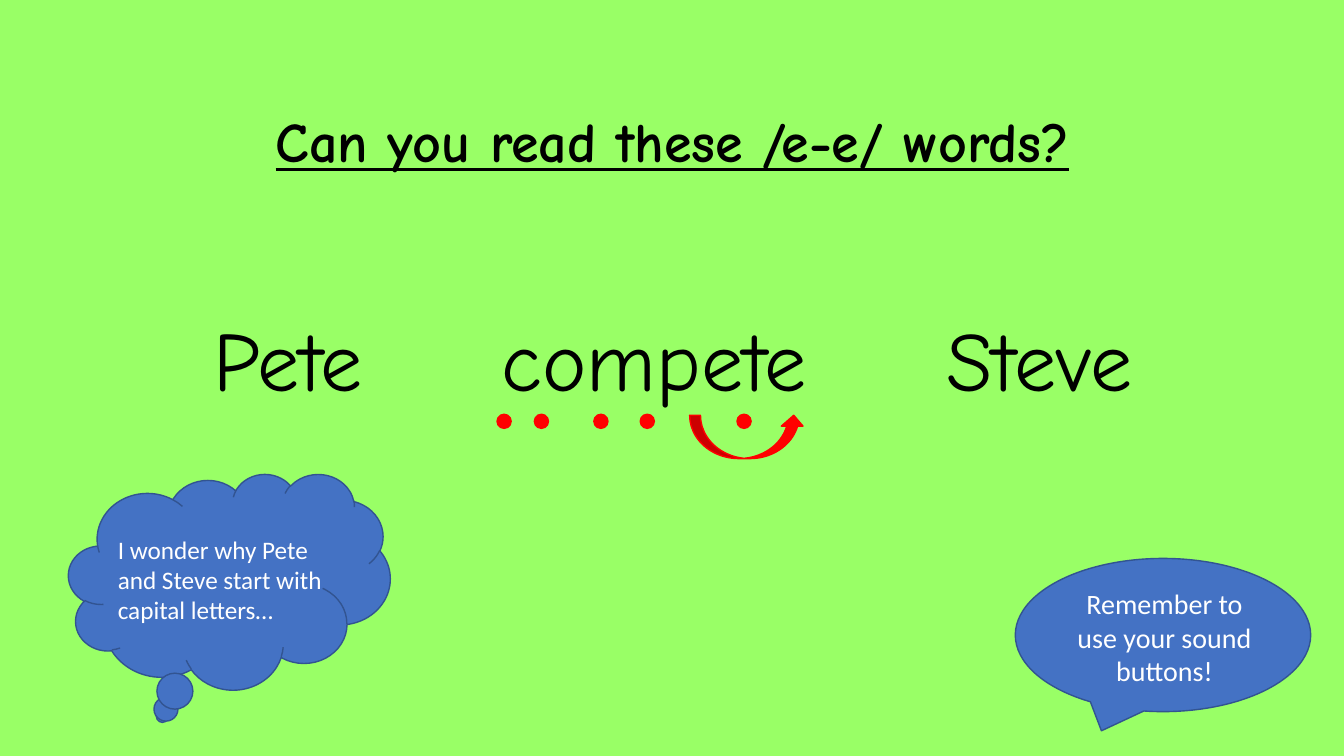
"""Build a phonics slide for reading split-digraph e-e words."""
from pptx import Presentation
from pptx.dml.color import RGBColor
from pptx.enum.shapes import MSO_SHAPE
from pptx.enum.text import PP_ALIGN
from pptx.util import Inches, Pt

CENTER, LEFT = PP_ALIGN.CENTER, PP_ALIGN.LEFT
DOT, SPLIT_ARROW = MSO_SHAPE.OVAL, MSO_SHAPE.CURVED_UP_ARROW
SPEECH, THOUGHT = MSO_SHAPE.OVAL_CALLOUT, MSO_SHAPE.CLOUD_CALLOUT

COLORS = {
    "background": "99FF66",
    "ink": "000000",
    "callout": "4472C4",
    "callout_edge": "325491",
    "callout_text": "FFFFFF",
    "sound": "FF0000",
}
TITLE = {"name": "Comic Neue", "size": Pt(40), "bold": True, "underline": True}
WORD = {"name": "Comic Neue", "size": Pt(60)}
REMINDER = {"name": "Calibri", "size": Pt(20)}
QUESTION = {"name": "Calibri", "size": Pt(18)}

WORD_CENTERS = {"Pete": 2.86, "compete": 6.49, "Steve": 10.31}
WORD_TOP, WORD_WIDTH, WORD_HEIGHT = 3.0, 3.6, 1.1
DOT_LEFTS = (4.93, 5.3, 5.89, 6.35, 7.31)
DOT_TOP, DOT_SIZE = 4.11, 0.14


def rgb(role):
    """Return the colour for a role."""
    return RGBColor.from_string(COLORS[role])


def add_figure(slide, preset, box, fill, edge):
    """Draw a filled preset shape with a thin outline."""
    figure = slide.shapes.add_shape(preset, *map(Inches, box))
    figure.shadow.inherit = False
    figure.fill.solid()
    figure.fill.fore_color.rgb = rgb(fill)
    figure.line.color.rgb = rgb(edge)
    figure.line.width = Pt(1)


def add_wording(slide, wording, box, style, color, align=CENTER):
    """Place one wrapped paragraph of styled text."""
    frame = slide.shapes.add_textbox(*map(Inches, box)).text_frame
    frame.word_wrap = True
    paragraph = frame.paragraphs[0]
    paragraph.alignment = align
    run = paragraph.add_run()
    run.text = wording
    run.font.color.rgb = rgb(color)
    for attribute, value in style.items():
        setattr(run.font, attribute, value)


def add_callout(slide, preset, box, wording, wording_box, style, align):
    """Draw a callout and its message."""
    add_figure(slide, preset, box, "callout", "callout_edge")
    add_wording(slide, wording, wording_box, style, "callout_text", align)


def add_words(slide):
    """Place the reading words on one shared row."""
    for word, center in WORD_CENTERS.items():
        box = (center - WORD_WIDTH / 2, WORD_TOP, WORD_WIDTH, WORD_HEIGHT)
        add_wording(slide, word, box, WORD, "ink")


def add_sound_buttons(slide):
    """Draw the split-digraph arrow and the single-sound dots."""
    add_figure(slide, SPLIT_ARROW, (6.84, 4.12, 1.14, 0.43), "sound", "sound")
    for left in DOT_LEFTS:
        box = (left, DOT_TOP, DOT_SIZE, DOT_SIZE)
        add_figure(slide, DOT, box, "sound", "sound")


def main():
    """Build and save the slide."""
    deck = Presentation()
    deck.slide_width, deck.slide_height = Inches(13.33), Inches(7.5)
    slide = deck.slides.add_slide(deck.slide_layouts[6])
    slide.background.fill.solid()
    slide.background.fill.fore_color.rgb = rgb("background")

    add_wording(slide, "Can you read these /e-e/ words?",
                (0.12, 1.01, 13.1, 0.8), TITLE, "ink")
    add_words(slide)
    add_callout(slide, SPEECH, (10.07, 5.54, 2.93, 1.52),
                "Remember to use your sound buttons!",
                (10.46, 5.77, 2.18, 1.11), REMINDER, CENTER)
    add_callout(slide, THOUGHT, (0.68, 4.7, 3.19, 2.14),
                "I wonder why Pete and Steve start with capital letters…",
                (1.07, 5.25, 2.3, 1.01), QUESTION, LEFT)
    add_sound_buttons(slide)
    deck.save("out.pptx")


if __name__ == "__main__":
    main()
